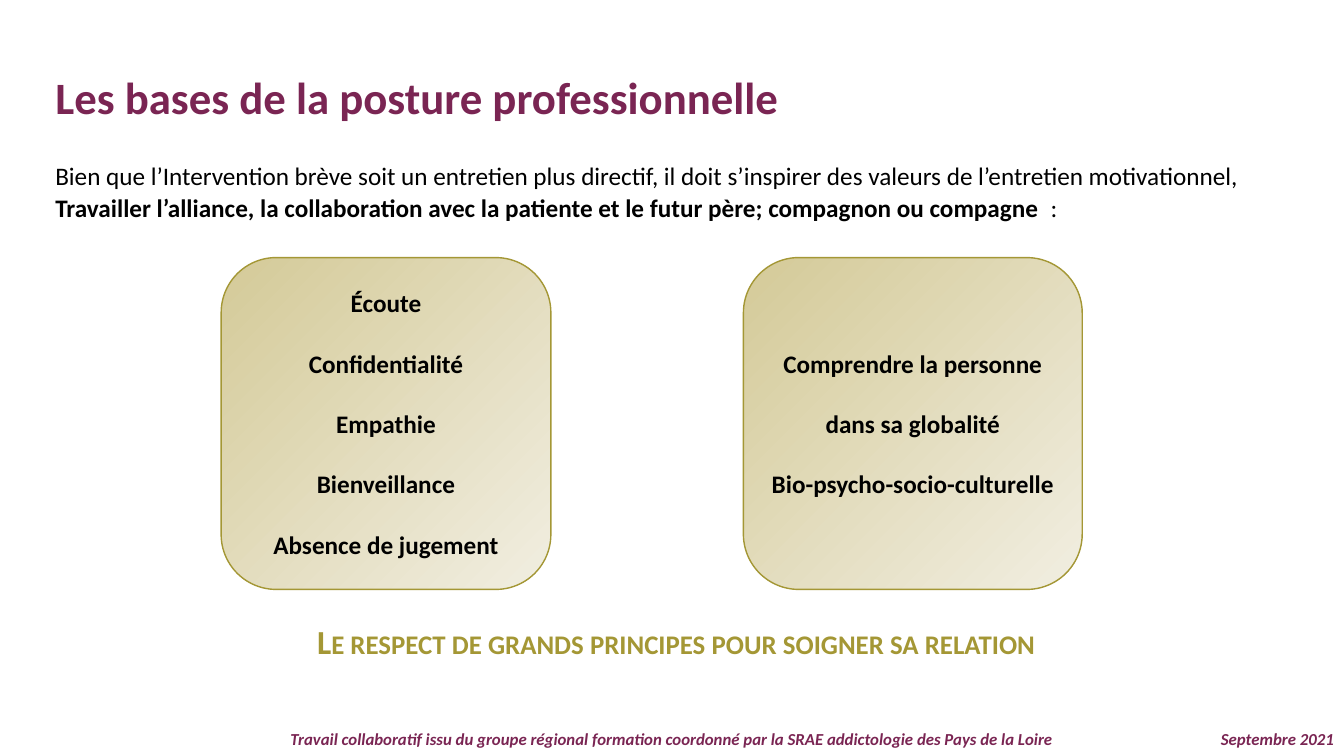
from dataclasses import dataclass

import pptx
import pptx.dml.color
import pptx.enum.shapes
import pptx.enum.text
import pptx.util

Pt = pptx.util.Pt
Align = pptx.enum.text.PP_ALIGN
Anchor = pptx.enum.text.MSO_ANCHOR


@dataclass(frozen=True)
class Theme:
    font: str = "Calibri"
    plum: str = "7A2553"
    olive: str = "A49735"
    black: str = "000000"
    card_start: str = "D4CA98"
    card_end: str = "F1EEE1"
    title_size: int = 32
    banner_size: int = 24
    body_size: int = 18
    footer_size: int = 12


class SlideBuilder:
    def __init__(self, presentation, theme):
        self.theme = theme
        self.slide = presentation.slides.add_slide(presentation.slide_layouts[5])

    def place(self, shape, box):
        shape.left, shape.top, shape.width, shape.height = map(Pt, box)

    def color(self, value):
        return pptx.dml.color.RGBColor.from_string(value)

    def format_text(self, shape, size, color, align, anchor=Anchor.TOP, bold=True, italic=False):
        frame = shape.text_frame
        frame.word_wrap = True
        frame.auto_size = pptx.enum.text.MSO_AUTO_SIZE.NONE
        frame.vertical_anchor = anchor
        for paragraph in frame.paragraphs:
            paragraph.alignment = align
            for run in paragraph.runs:
                run.font.name = self.theme.font
                run.font.size = Pt(size)
                run.font.color.rgb = self.color(color)
                run.font.bold = bold
                run.font.italic = italic

    def title(self, text, box):
        title = self.slide.shapes.title
        self.place(title, box)
        title.text_frame.text = text
        self.format_text(title, self.theme.title_size, self.theme.plum, Align.LEFT)

    def text(self, text, box, size, color, align, **style):
        shape = self.slide.shapes.add_textbox(*map(Pt, box))
        shape.text_frame.text = text
        self.format_text(shape, size, color, align, **style)
        return shape.text_frame

    def footer(self, text, box, align):
        frame = self.text(text, box, self.theme.footer_size, self.theme.plum, align, italic=True)
        frame.paragraphs[0].line_spacing = 0.9

    def intro(self, sentence, emphasis, ending, box):
        """Add a plain sentence, then a bold line with a plain ending."""
        frame = self.text(f"{sentence}\n{emphasis}", box, self.theme.body_size,
                          self.theme.black, Align.LEFT)
        first, second = frame.paragraphs
        first.runs[0].font.bold = False
        second.line_spacing = 0.9
        second.space_before = Pt(3.6)
        run = second.add_run()
        run.text = ending
        run.font.name = self.theme.font
        run.font.size = Pt(self.theme.body_size)
        run.font.color.rgb = self.color(self.theme.black)

    def banner(self, text, box):
        """Add a centred line in small capitals."""
        frame = self.text(text, box, self.theme.banner_size, self.theme.olive, Align.CENTER)
        frame.paragraphs[0].runs[0].font._element.set("cap", "small")

    def card(self, lines, box):
        """Add a rounded gradient box with evenly spaced lines."""
        card = self.slide.shapes.add_shape(
            pptx.enum.shapes.MSO_SHAPE.ROUNDED_RECTANGLE, *map(Pt, box))
        card.shadow.inherit = False
        card.fill.gradient()
        card.fill.gradient_angle = 315
        stops = card.fill.gradient_stops
        for stop, color in zip(stops, (self.theme.card_start, self.theme.card_end)):
            stop.color.rgb = self.color(color)
        card.line.color.rgb = self.color(self.theme.olive)
        card.line.width = Pt(1)
        card.text_frame.text = "\n".join(lines)
        self.format_text(card, self.theme.body_size, self.theme.black, Align.CENTER, Anchor.MIDDLE)
        for paragraph in card.text_frame.paragraphs[1:]:
            paragraph.space_before = Pt(21.5)


def main():
    presentation = pptx.Presentation()
    presentation.slide_width, presentation.slide_height = Pt(960), Pt(540)
    theme = Theme()
    builder = SlideBuilder(presentation, theme)

    builder.title("Les bases de la posture professionnelle", (32.4, 46, 934, 46))
    builder.intro(
        "Bien que l’Intervention brève soit un entretien plus directif, "
        "il doit s’inspirer des valeurs de l’entretien motivationnel,",
        "Travailler l’alliance, la collaboration avec la patiente et le futur père; "
        "compagnon ou compagne ",
        " :", (32.4, 111, 934, 53))
    builder.card(("Écoute", "Confidentialité", "Empathie", "Bienveillance",
                  "Absence de jugement"), (158, 184, 235.5, 237))
    builder.card(("Comprendre la personne", "dans sa globalité",
                  "Bio-psycho-socio-culturelle"), (531, 184, 242, 237))
    builder.banner("Le respect de grands principes pour soigner sa relation",
                   (32.4, 440, 901, 36))
    builder.footer("Travail collaboratif issu du groupe régional formation coordonné "
                   "par la SRAE addictologie des Pays de la Loire",
                   (0, 518.4, 960, 21.6), Align.CENTER)
    builder.footer("Septembre 2021", (846, 518.4, 114, 21.6), Align.RIGHT)
    presentation.save("out.pptx")


if __name__ == "__main__":
    main()
